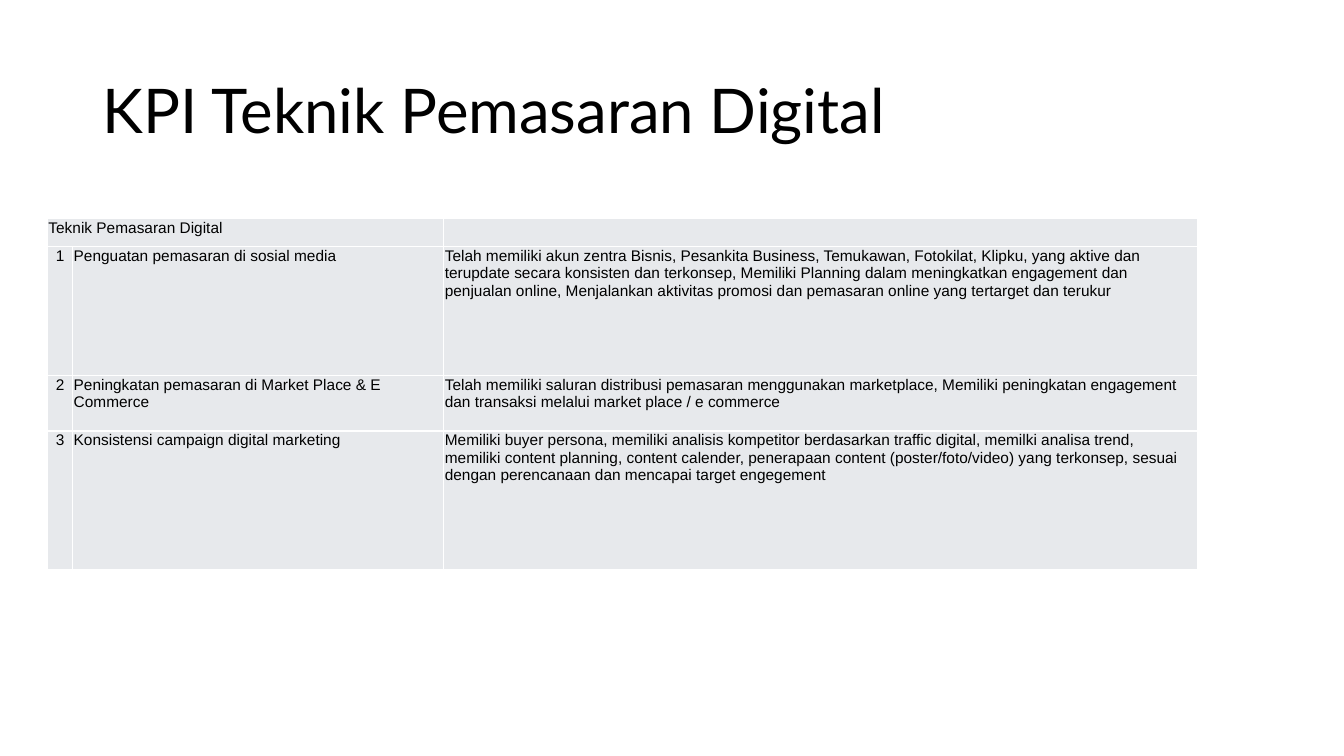
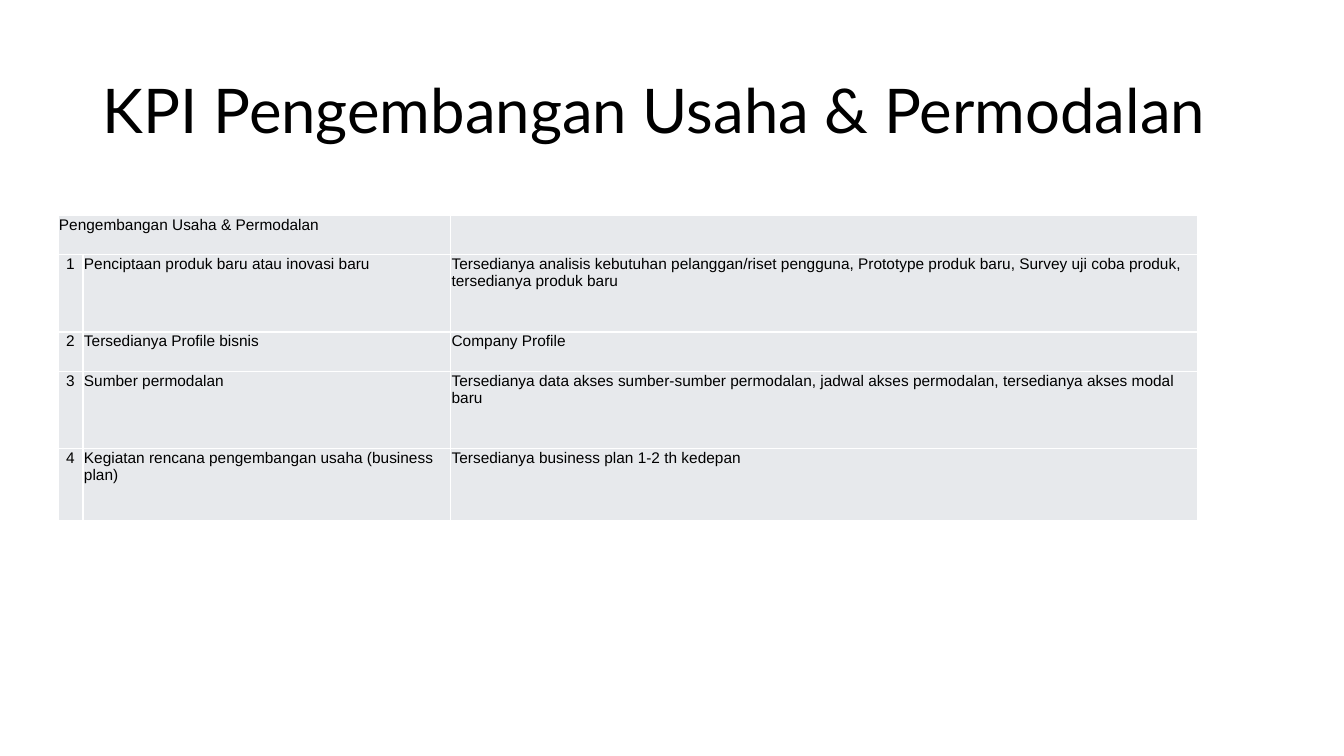
import dataclasses

import lxml.etree
import pptx
import pptx.dml.color
import pptx.enum.text
import pptx.oxml.ns
import pptx.util


@dataclasses.dataclass(frozen=True)
class Theme:
    """Colours, fonts, sizes and shared proportions of the deck."""
    ink: str = "000000"
    cell: str = "E7E9EC"
    rule: str = "FFFFFF"
    title_font: str = "Lato"
    body_font: str = "Arial"
    title_size: int = 44
    body_size: int = 11
    rule_width: int = 1
    title_box: tuple = (6.9, 5.33, 86.25, 19.33)
    columns: tuple = (2.2, 32.26, 65.54)


THEME = Theme()
WIDTH, HEIGHT = pptx.util.Inches(13.33), pptx.util.Inches(7.5)
ALIGN = pptx.enum.text.PP_ALIGN

SLIDES = [
    {
        "title": "KPI Teknik Pemasaran Digital",
        "heading": "Teknik Pemasaran Digital",
        "box": (3.53, 28.9, 85.6, 46.45),
        "rows": (0.28, 1.27, 0.55, 1.37),
        "items": [
            ("Penguatan pemasaran di sosial media",
             "Telah memiliki akun zentra Bisnis, Pesankita Business, Temukawan, Fotokilat, Klipku, "
             "yang aktive dan terupdate secara konsisten dan terkonsep, Memiliki Planning dalam "
             "meningkatkan engagement dan penjualan online, Menjalankan aktivitas promosi dan "
             "pemasaran online yang tertarget dan terukur"),
            ("Peningkatan pemasaran di Market Place & E Commerce",
             "Telah memiliki saluran distribusi pemasaran menggunakan marketplace, Memiliki "
             "peningkatan engagement dan transaksi melalui market place / e commerce"),
            ("Konsistensi campaign digital marketing",
             "Memiliki buyer persona, memiliki analisis kompetitor berdasarkan traffic digital, "
             "memilki analisa trend, memiliki content planning, content calender, penerapaan "
             "content (poster/foto/video) yang terkonsep, sesuai dengan perencanaan dan mencapai "
             "target engegement"),
        ],
    },
    {
        "title": "KPI Pengembangan Usaha & Permodalan",
        "heading": "Pengembangan Usaha & Permodalan",
        "box": (4.31, 28.5, 84.8, 40.42),
        "rows": (0.39, 0.77, 0.39, 0.77, 0.72),
        "items": [
            ("Penciptaan produk baru atau inovasi baru",
             "Tersedianya analisis kebutuhan pelanggan/riset pengguna, Prototype produk baru, "
             "Survey uji coba produk, tersedianya produk baru"),
            ("Tersedianya Profile bisnis", "Company Profile"),
            ("Sumber permodalan",
             "Tersedianya data akses sumber-sumber permodalan, jadwal akses permodalan, "
             "tersedianya akses modal baru"),
            ("Kegiatan rencana pengembangan usaha (business plan)",
             "Tersedianya business plan 1-2 th kedepan"),
        ],
    },
]


def place(box):
    """Turn a box in percent of the slide into lengths."""
    x, y, w, h = box
    return [int(v / 100 * side) for v, side in
            ((x, WIDTH), (y, HEIGHT), (w, WIDTH), (h, HEIGHT))]


def share(total, weights):
    """Divide a length in proportion to weights."""
    return [int(total * w / sum(weights)) for w in weights]


def write(p, text, font, size, align=ALIGN.LEFT):
    """Add one styled run to a paragraph."""
    p.alignment = align
    r = p.add_run()
    r.text = text
    r.font.name, r.font.size = font, pptx.util.Pt(size)
    r.font.color.rgb = pptx.dml.color.RGBColor.from_string(THEME.ink)


def add_title(s, text):
    """Fill and place the title placeholder."""
    sp = s.shapes.title
    sp.left, sp.top, sp.width, sp.height = place(THEME.title_box)
    tf = sp.text_frame
    tf.auto_size = pptx.enum.text.MSO_AUTO_SIZE.NONE
    tf.vertical_anchor = pptx.enum.text.MSO_ANCHOR.MIDDLE
    p = tf.paragraphs[0]
    p.line_spacing = 0.9
    write(p, text, THEME.title_font, THEME.title_size)


def style_cell(cell, right_margin):
    """Give a cell its margins, borders and fill."""
    qn = pptx.oxml.ns.qn
    cell.margin_left = cell.margin_top = pptx.util.Inches(0.01)
    cell.margin_right = pptx.util.Inches(right_margin)
    cell.margin_bottom = 0
    tc_pr = cell._tc.get_or_add_tcPr()
    for side in ("a:lnL", "a:lnR", "a:lnT", "a:lnB"):
        ln = lxml.etree.SubElement(tc_pr, qn(side), w=str(pptx.util.Pt(THEME.rule_width)))
        fill = lxml.etree.SubElement(ln, qn("a:solidFill"))
        lxml.etree.SubElement(fill, qn("a:srgbClr"), val=THEME.rule)
    cell.fill.solid()
    cell.fill.fore_color.rgb = pptx.dml.color.RGBColor.from_string(THEME.cell)


def fill_cell(cell, text, align):
    """Write a cell, keeping an empty one at body size."""
    p = cell.text_frame.paragraphs[0]
    if text:
        write(p, text, THEME.body_font, THEME.body_size, align)
    else:
        lxml.etree.SubElement(p._p, pptx.oxml.ns.qn("a:endParaRPr"),
                              sz=str(THEME.body_size * 100))


def add_kpi_table(s, box, heights, heading, items):
    """Add the numbered indicator table under its heading row."""
    x, y, w, h = place(box)
    rows = [(heading, "", "")]
    rows += [(str(n), *item) for n, item in enumerate(items, 1)]
    table = s.shapes.add_table(len(rows), len(THEME.columns), x, y, w, h).table
    table.first_row = table.horz_banding = False
    for column, width in zip(table.columns, share(w, THEME.columns)):
        column.width = width
    for row, height in zip(table.rows, share(h, heights)):
        row.height = height
    for i, texts in enumerate(rows):
        for j, text in enumerate(texts):
            cell = table.cell(i, j)
            style_cell(cell, 0.07 if j == 2 else 0.01)
            fill_cell(cell, text, ALIGN.CENTER if i and j == 0 else ALIGN.LEFT)
    table.cell(0, 0).merge(table.cell(0, 1))


def add_kpi_slide(prs, content):
    """Add one slide with a title and an indicator table."""
    s = prs.slides.add_slide(prs.slide_layouts[5])
    add_title(s, content["title"])
    add_kpi_table(s, content["box"], content["rows"], content["heading"], content["items"])


def main():
    """Build and save the deck."""
    prs = pptx.Presentation()
    prs.slide_width, prs.slide_height = WIDTH, HEIGHT
    for content in SLIDES:
        add_kpi_slide(prs, content)
    prs.save("out.pptx")


if __name__ == "__main__":
    main()
